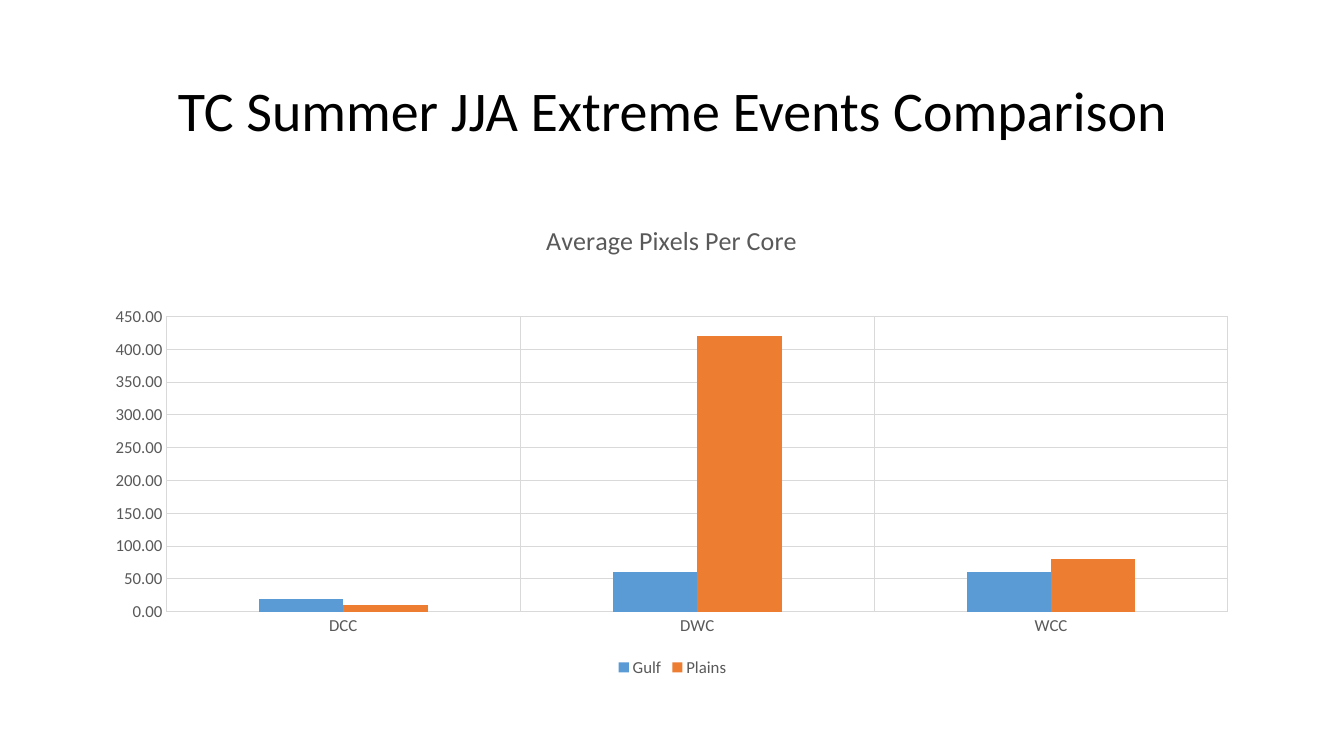
from dataclasses import dataclass

from pptx import Presentation
from pptx.chart.axis import CategoryAxis, ValueAxis
from pptx.chart.chart import Chart
from pptx.chart.data import CategoryChartData
from pptx.dml.color import RGBColor
from pptx.enum.chart import XL_CHART_TYPE, XL_LEGEND_POSITION, XL_TICK_MARK
from pptx.enum.text import MSO_ANCHOR, PP_ALIGN
from pptx.oxml import parse_xml
from pptx.oxml.ns import nsdecls
from pptx.slide import Slide
from pptx.text.text import Font
from pptx.util import Inches, Pt

COLUMN = XL_CHART_TYPE.COLUMN_CLUSTERED
BOTTOM = XL_LEGEND_POSITION.BOTTOM
NO_TICK = XL_TICK_MARK.NONE
MIDDLE = MSO_ANCHOR.MIDDLE
CENTER = PP_ALIGN.CENTER

BLACK = RGBColor(0x00, 0x00, 0x00)
GRAY = RGBColor(0x59, 0x59, 0x59)
PALE = RGBColor(0xD9, 0xD9, 0xD9)
BLUE = RGBColor(0x5B, 0x9B, 0xD5)
ORANGE = RGBColor(0xED, 0x7D, 0x31)

FACE = "Calibri"
LEFT, WIDTH = Inches(0.92), Inches(11.5)
HEIGHT = Inches(4.76)


@dataclass(frozen=True)
class Region:
    name: str
    cores: tuple[float, ...]
    color: RGBColor


EVENTS = ("DCC", "DWC", "WCC")
REGIONS = (
    Region("Gulf", (20, 60, 60), BLUE),
    Region("Plains", (10, 420, 80), ORANGE),
)


def set_font(font: Font, size: float, color: RGBColor) -> None:
    font.name = FACE
    font.size = Pt(size)
    font.bold = False
    font.color.rgb = color


def set_layout(chart: Chart, tag: str, inner: bool = False, **parts: float) -> None:
    """Place a chart part, given in inches from the chart's top left corner."""
    target = '<c:layoutTarget val="inner"/>' if inner else ""
    modes = '<c:xMode val="edge"/><c:yMode val="edge"/>'
    spans = {"x": WIDTH, "w": WIDTH, "y": HEIGHT, "h": HEIGHT}
    sizes = "".join(
        f'<c:{key} val="{Inches(val) / spans[key]}"/>' for key, val in parts.items()
    )
    layout = parse_xml(
        f'<c:layout {nsdecls("c")}><c:manualLayout>'
        f"{target}{modes}{sizes}</c:manualLayout></c:layout>"
    )
    owner = chart.element.xpath(f"c:chart/{tag}")[0]
    for old in owner.xpath("c:layout"):
        owner.remove(old)
    owner.insert(len(owner.xpath("c:tx")), layout)


def style_axis(axis: CategoryAxis | ValueAxis) -> None:
    axis.major_tick_mark = axis.minor_tick_mark = NO_TICK
    axis.has_major_gridlines = True
    for line in (axis.format.line, axis.major_gridlines.format.line):
        line.color.rgb = PALE
        line.width = Pt(0.75)
    set_font(axis.tick_labels.font, 12, GRAY)


def add_title(slide: Slide, text: str) -> None:
    title = slide.shapes.title
    title.left, title.top = LEFT, Inches(0.4)
    title.width, title.height = WIDTH, Inches(1.45)
    frame = title.text_frame
    frame.text = text
    frame.vertical_anchor = MIDDLE
    par = frame.paragraphs[0]
    par.alignment = CENTER
    par.line_spacing = 0.9
    set_font(par.font, 40, BLACK)


def add_bars(slide: Slide) -> None:
    data = CategoryChartData()
    data.categories = EVENTS
    for region in REGIONS:
        data.add_series(region.name, region.cores)
    chart = slide.shapes.add_chart(
        COLUMN, LEFT, Inches(2), WIDTH, HEIGHT, data
    ).chart
    set_font(chart.font, 10, BLACK)

    chart.has_title = True
    frame = chart.chart_title.text_frame
    frame.text = "Average Pixels Per Core"
    set_font(frame.paragraphs[0].font, 18.6, GRAY)
    set_layout(chart, "c:title", x=4.45, y=0.16)
    set_layout(chart, "c:plotArea", inner=True, x=0.73, y=1.14, w=10.53, h=2.93)

    style_axis(chart.category_axis)
    scale = chart.value_axis
    style_axis(scale)
    scale.format.line.fill.background()
    scale.minimum_scale, scale.maximum_scale, scale.major_unit = 0, 450, 50
    scale.tick_labels.number_format = "0.00"
    scale.tick_labels.number_format_is_linked = False

    chart.has_legend = True
    chart.legend.position = BOTTOM
    chart.legend.include_in_layout = False
    set_font(chart.legend.font, 12, GRAY)

    plot = chart.plots[0]
    plot.gap_width, plot.overlap = 219, 0
    plot.vary_by_categories = False
    for series, region in zip(plot.series, REGIONS):
        series.format.fill.solid()
        series.format.fill.fore_color.rgb = region.color


def main() -> None:
    deck = Presentation()
    deck.slide_width, deck.slide_height = Inches(13.33), Inches(7.5)
    slide = deck.slides.add_slide(deck.slide_layouts.get_by_name("Title Only"))
    add_title(slide, "TC Summer JJA Extreme Events Comparison")
    add_bars(slide)
    deck.save("out.pptx")


if __name__ == "__main__":
    main()
